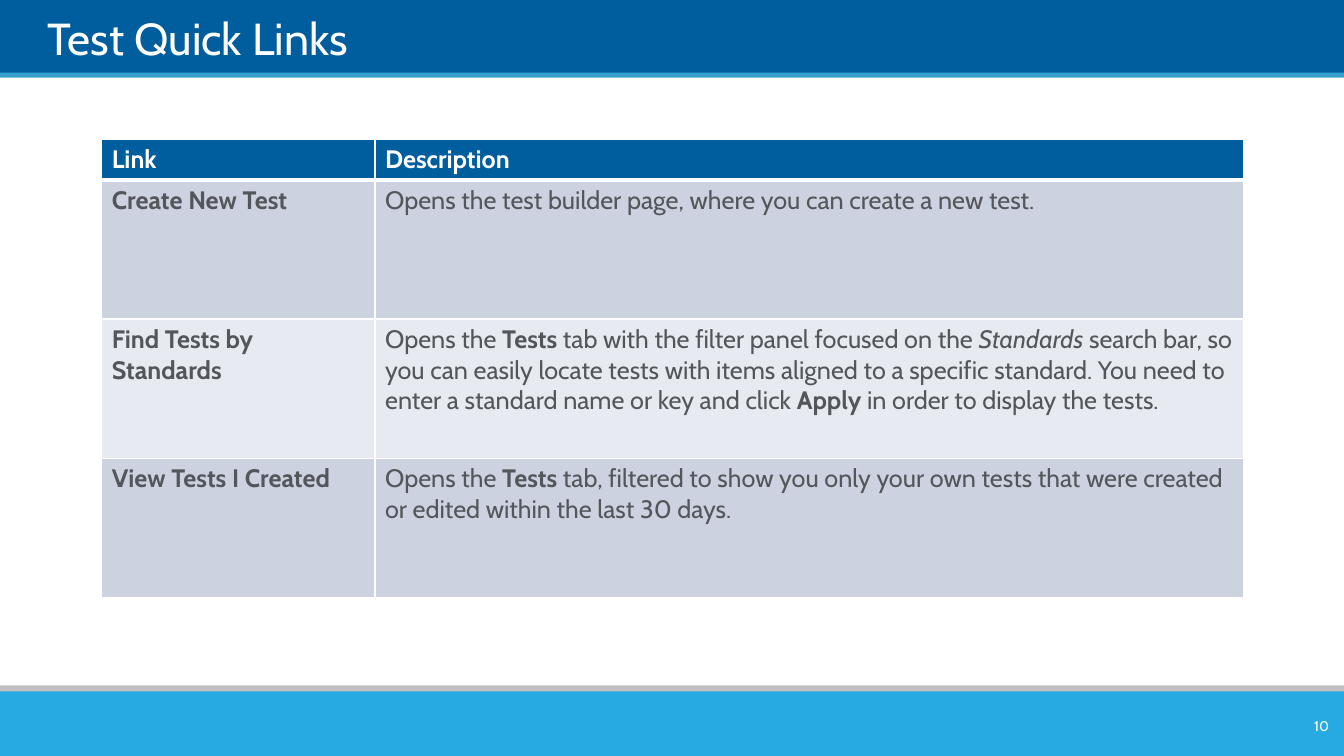
from pptx import Presentation
from pptx.dml.color import RGBColor
from pptx.enum.shapes import MSO_SHAPE as Shape
from pptx.enum.text import MSO_ANCHOR as Anchor, MSO_AUTO_SIZE as AutoSize, PP_ALIGN as Align
from pptx.oxml import parse_xml
from pptx.oxml.ns import nsdecls
from pptx.util import Inches, Pt

WHITE = RGBColor(0xFF, 0xFF, 0xFF)
NAVY = RGBColor(0x00, 0x5E, 0x9E)
BLUE = RGBColor(0x35, 0xA0, 0xCE)
SKY = RGBColor(0x27, 0xAA, 0xE1)
GRAY = RGBColor(0xBF, 0xBF, 0xBF)
INK = RGBColor(0x53, 0x56, 0x5A)
ROW_DARK = RGBColor(0xCC, 0xD2, 0xDF)
ROW_LIGHT = RGBColor(0xE7, 0xEA, 0xF0)
FONT = "Cabin"


def style(font, size, color, bold=None):
    font.name = FONT
    font.size = Pt(size)
    font.color.rgb = color
    font.bold = bold


def add_border(cell, side, width):
    cell._tc.get_or_add_tcPr().append(parse_xml(
        f'<a:{side} {nsdecls("a")} w="{Pt(width)}"><a:solidFill>'
        f'<a:srgbClr val="{WHITE}"/></a:solidFill></a:{side}>'))


deck = Presentation()
deck.slide_width = Inches(13.33)
deck.slide_height = Inches(7.5)
slide = deck.slides.add_slide(deck.slide_layouts[5])

for top, height, color in [(-0.01, 0.75, NAVY), (0.72, 0.05, BLUE),
                           (6.8, 0.14, GRAY), (6.86, 0.64, SKY)]:
    band = slide.shapes.add_shape(Shape.RECTANGLE, 0, Inches(top), deck.slide_width, Inches(height))
    band.shadow.inherit = False
    band.fill.solid()
    band.fill.fore_color.rgb = color
    band.line.fill.background()

title = slide.shapes.title
slide.shapes._spTree.append(title._element)
title.left, title.top, title.width, title.height = map(Inches, (0.47, 0.07, 12.43, 0.57))
heading = title.text_frame
heading.text = "Test Quick Links"
heading.auto_size = AutoSize.NONE
heading.vertical_anchor = Anchor.BOTTOM
heading.margin_left = heading.margin_right = heading.margin_top = heading.margin_bottom = 0
heading.paragraphs[0].alignment = Align.LEFT
style(heading.paragraphs[0].font, 32, WHITE)

links = [
    ("Link", [("Description", "")]),
    ("Create New Test", [("Opens the test builder page, where you can create a new test.", "")]),
    ("Find Tests by Standards", [
        ("Opens the ", ""), ("Tests", "bold"),
        (" tab with the filter panel focused on the ", ""), ("Standards", "italic"),
        (" search bar, so you can easily locate tests with items aligned to a specific standard. "
         "You need to enter a standard name or key and click ", ""),
        ("Apply", "bold"), (" in order to display the tests.", "")]),
    ("View Tests I Created", [
        ("Opens the ", ""), ("Tests", "bold"),
        (" tab, filtered to show you only your own tests that were created or edited "
         "within the last 30 days.", "")]),
]
table = slide.shapes.add_table(len(links), 2, Inches(1.01), Inches(1.38),
                               Inches(11.32), Inches(4.53)).table
table.columns[0].width = Inches(2.71)
table.columns[1].width = Inches(8.61)

for row, (link, description) in enumerate(links):
    is_header = row == 0
    table.rows[row].height = Inches(0.38 if is_header else 1.38)
    row_fill = NAVY if is_header else ROW_DARK if row % 2 else ROW_LIGHT
    for column, parts in enumerate([[(link, "")], description]):
        cell = table.cell(row, column)
        for side in ("lnL", "lnR", "lnT", "lnB"):
            header_edge = (row, side) in [(0, "lnB"), (1, "lnT")]
            add_border(cell, side, 3 if header_edge else 1)
        cell.fill.solid()
        cell.fill.fore_color.rgb = row_fill
        paragraph = cell.text_frame.paragraphs[0]
        style(paragraph.font, 18, WHITE if is_header else INK, is_header or column == 0)
        for text, emphasis in parts:
            run = paragraph.add_run()
            run.text = text
            style(run.font, 18, WHITE if is_header else INK,
                  is_header or column == 0 or emphasis == "bold")
            if emphasis == "italic":
                run.font.italic = True

page_number = slide.shapes.add_textbox(*map(Inches, (12.51, 7.05, 0.77, 0.3))).text_frame
page_number.word_wrap = True
page_number.vertical_anchor = Anchor.MIDDLE
page_number.text = "10"
page_number.paragraphs[0].alignment = Align.RIGHT
style(page_number.paragraphs[0].font, 10, WHITE)

deck.save("out.pptx")
